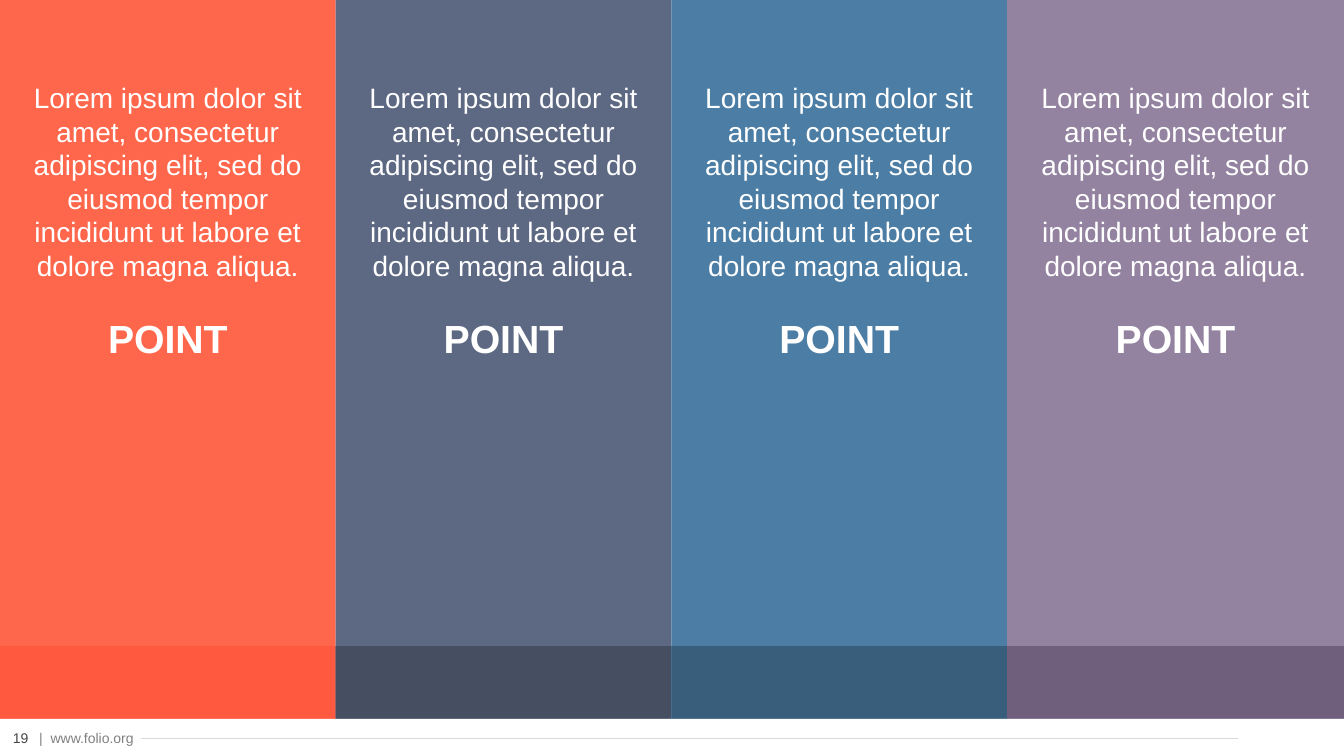
from pptx import Presentation
from pptx.dml.color import RGBColor
from pptx.enum.shapes import MSO_CONNECTOR, MSO_SHAPE
from pptx.enum.text import MSO_ANCHOR, PP_ALIGN
from pptx.oxml.xmlchemy import OxmlElement
from pptx.util import Cm, Pt

# Content
BODY = ("Lorem ipsum dolor sit amet, consectetur adipiscing elit, sed do "
        "eiusmod tempor incididunt ut labore et dolore magna aliqua.")
POINTS = [  # body, heading, column colour, band colour
    (BODY, "POINT", "coral", "red"),
    (BODY, "POINT", "slate", "ink"),
    (BODY, "POINT", "blue", "navy"),
    (BODY, "POINT", "mauve", "plum"),
]
SITE = "|  www.folio.org"
PAGE = "19"

# Formats
COLORS = {
    "coral": "FF674C", "slate": "5D6883", "blue": "4C7EA5", "mauve": "9383A0",
    "red": "FF5A3F", "ink": "464E62", "navy": "395E7C", "plum": "6F5F7C",
    "white": "FFFFFF", "grey": "808080", "dark": "454545", "rule": "D9D9D9",
}
FONTS = {
    "body": {"name": "Arial", "size": Pt(20), "bold": False},
    "head": {"name": "Arial", "size": Pt(28), "bold": True},
    "foot": {"name": "Arial", "size": Pt(10), "bold": False},
}
INSETS = {"margin_left": Cm(0.51), "margin_top": Cm(2.03),
          "margin_right": Cm(0.51), "margin_bottom": Cm(0.08)}

# Measures in centimetres
WIDE, HIGH = 33.87, 19.05
COL, BASE, BAND = 8.46, 18.11, 1.83
FOOT, LINE = 18.26, 0.69


def color(key):
    return RGBColor.from_string(COLORS[key])


def assign(item, values):
    for key, value in values.items():
        setattr(item, key, value)


def write(para, text, font, tint, align):
    para.text = text
    para.alignment = align
    assign(para.font, FONTS[font])
    para.font.color.rgb = color(tint)


def block(slide, left, top, width, height, fill):
    rect = slide.shapes.add_shape(MSO_SHAPE.RECTANGLE, Cm(left), Cm(top),
                                  Cm(width), Cm(height))
    rect.shadow.inherit = False
    rect.fill.solid()
    rect.fill.fore_color.rgb = color(fill)
    rect.line.fill.background()
    return rect


def label(slide, left, width, text, tint, align, anchor):
    box = slide.shapes.add_textbox(Cm(left), Cm(FOOT), Cm(width), Cm(LINE))
    assign(box.text_frame, {"word_wrap": True, "vertical_anchor": anchor})
    write(box.text_frame.paragraphs[0], text, "foot", tint, align)


def main():
    deck = Presentation()
    assign(deck, {"slide_width": Cm(WIDE), "slide_height": Cm(HIGH)})
    slide = deck.slides.add_slide(deck.slide_layouts[6])

    # Footer
    label(slide, 0.74, 4.93, SITE, "grey", PP_ALIGN.LEFT, MSO_ANCHOR.TOP)
    label(slide, -0.1, 1.24, PAGE, "dark", PP_ALIGN.CENTER, MSO_ANCHOR.MIDDLE)
    rule = slide.shapes.add_connector(MSO_CONNECTOR.STRAIGHT, Cm(3.56),
                                      Cm(18.61), Cm(31.19), Cm(18.61))
    rule.line.color.rgb = color("rule")
    rule.line.width = Pt(1)
    rule._element.spPr.append(OxmlElement("a:effectLst"))

    # Columns, the last one reaching the slide edge
    last = len(POINTS) - 1
    for i, (body, head, fill, dark) in enumerate(POINTS):
        left = i * COL
        width = WIDE - left if i == last else COL
        frame = block(slide, left, 0, width, BASE, fill).text_frame
        assign(frame, INSETS)
        assign(frame, {"word_wrap": True, "vertical_anchor": MSO_ANCHOR.TOP})
        write(frame.paragraphs[0], body, "body", "white", PP_ALIGN.CENTER)
        point = frame.add_paragraph()
        write(point, head, "head", "white", PP_ALIGN.CENTER)
        point.space_before = Pt(23)

        # Band at the foot of the column
        block(slide, left, BASE - BAND, width, BAND, dark)

    deck.save("out.pptx")


if __name__ == "__main__":
    main()
